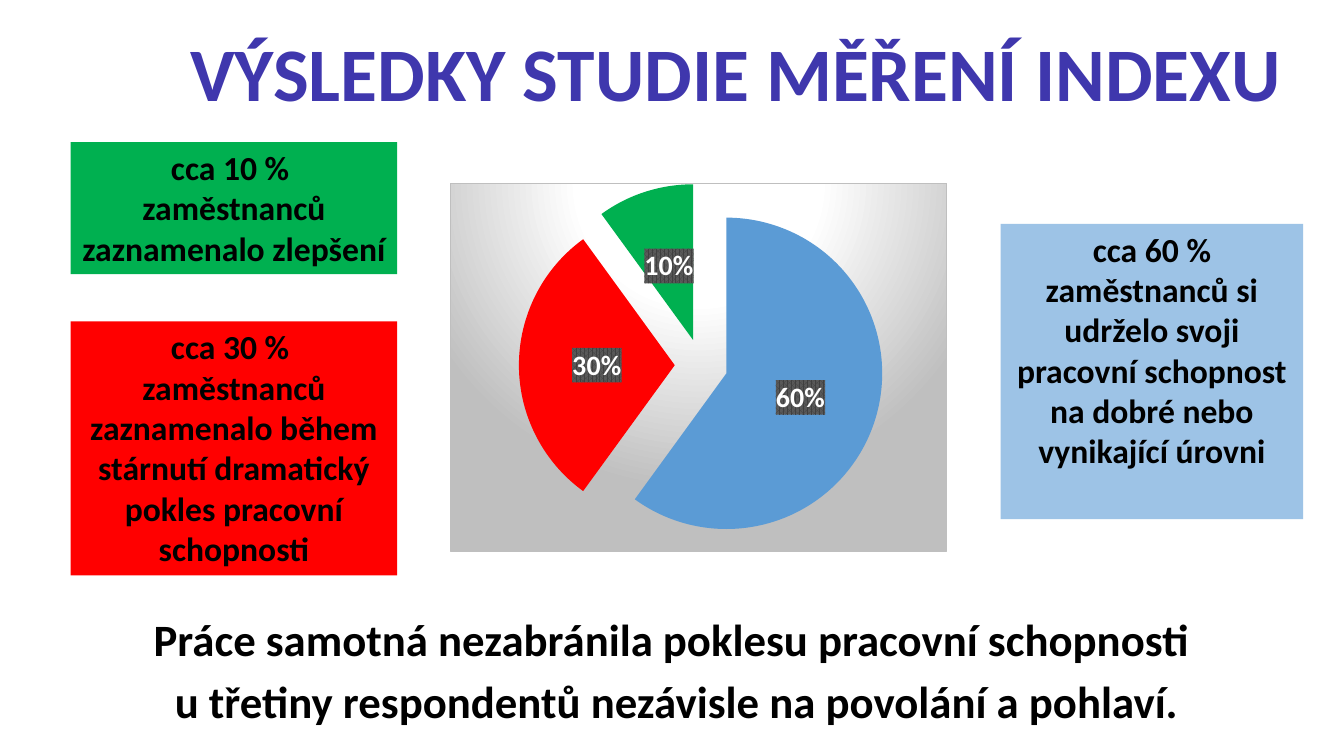
from lxml import etree
from pptx import Presentation
from pptx.chart import data as chart_data
from pptx.dml.color import RGBColor
from pptx.enum import chart as charts, shapes, text
from pptx.oxml import ns, parse_xml
from pptx.util import Cm, Pt

FONT = "Calibri"
BLACK = "000000"
SLICES = [(60, "5B9BD5"), (30, "FF0000"), (10, "00B050")]
NAMESPACES = ns.nsdecls("c", "a")

PLOT_LAYOUT = f"""<c:layout {NAMESPACES}><c:manualLayout>
<c:layoutTarget val="inner"/><c:xMode val="edge"/><c:yMode val="edge"/>
<c:x val="0.025"/><c:y val="0"/><c:w val="0.96"/><c:h val="0.99"/>
</c:manualLayout></c:layout>"""
CHART_BACKGROUND = f"""<c:spPr {NAMESPACES}><a:gradFill><a:gsLst>
<a:gs pos="0"><a:srgbClr val="FFFFFF"/></a:gs>
<a:gs pos="39000"><a:srgbClr val="FFFFFF"/></a:gs>
<a:gs pos="100000"><a:srgbClr val="BFBFBF"/></a:gs></a:gsLst>
<a:path path="circle"><a:fillToRect l="50000" t="-80000" r="50000" b="180000"/></a:path>
</a:gradFill><a:ln w="9525"><a:solidFill><a:srgbClr val="BFBFBF"/></a:solidFill></a:ln></c:spPr>"""
LABEL_BACKGROUND = f"""<c:spPr {NAMESPACES}><a:pattFill prst="pct75">
<a:fgClr><a:srgbClr val="404040"/></a:fgClr><a:bgClr><a:srgbClr val="595959"/></a:bgClr>
</a:pattFill><a:ln><a:noFill/></a:ln></c:spPr>"""


def color(value):
    return RGBColor.from_string(value)


def set_font(font, size, value, bold=True):
    font.name, font.size, font.bold = FONT, Pt(size), bold
    font.color.rgb = color(value)


def write_paragraphs(frame, lines, size, line_spacing=None, gap=0):
    frame.word_wrap = True
    frame.vertical_anchor = text.MSO_ANCHOR.TOP
    for index, line in enumerate(lines):
        paragraph = frame.add_paragraph() if index else frame.paragraphs[0]
        paragraph.text = line
        paragraph.alignment = text.PP_ALIGN.CENTER
        paragraph.line_spacing = line_spacing
        if index:
            paragraph.space_before = Pt(gap)
        set_font(paragraph.font, size, BLACK)


def place_title(slide, wording):
    title = slide.shapes.title
    title.left, title.top, title.width, title.height = Cm(3.94), Cm(0.53), Cm(29.21), Cm(2.84)
    title.text_frame.vertical_anchor = text.MSO_ANCHOR.MIDDLE
    paragraph = title.text_frame.paragraphs[0]
    paragraph.text = wording
    paragraph.alignment = text.PP_ALIGN.CENTER
    paragraph.line_spacing = 0.9
    set_font(paragraph.font, 54, "3F37AD")


def add_box(slide, left, top, width, height, fill, lines):
    shape = slide.shapes.add_shape(
        shapes.MSO_SHAPE.RECTANGLE, Cm(left), Cm(top), Cm(width), Cm(height))
    shape.shadow.inherit = False
    shape.fill.solid()
    shape.fill.fore_color.rgb = color(fill)
    shape.line.fill.background()
    write_paragraphs(shape.text_frame, lines, 24)


def add_conclusion(slide, lines):
    box = slide.shapes.add_textbox(Cm(1.3), Cm(15.44), Cm(31.52), Cm(2.59))
    write_paragraphs(box.text_frame, lines, 32, line_spacing=0.9, gap=10)


def add_pie(slide):
    data = chart_data.CategoryChartData()
    data.categories = [str(number) for number in range(1, len(SLICES) + 1)]
    data.add_series("Series 1", [value for value, _ in SLICES])
    chart = slide.shapes.add_chart(
        charts.XL_CHART_TYPE.PIE, Cm(11.35), Cm(4.6), Cm(12.52), Cm(9.3), data).chart
    chart.has_legend = False
    chart.has_title = False
    set_font(chart.font, 10, BLACK, bold=False)

    plot = chart.plots[0]
    plot.vary_by_categories = True
    series = plot.series[0]
    for index, (_, fill) in enumerate(SLICES):
        slice_format = series.points[index].format
        slice_format.fill.solid()
        slice_format.fill.fore_color.rgb = color(fill)
        slice_format.line.fill.background()
    explosion = etree.Element(ns.qn("c:explosion"), val="17")
    series._element.find(ns.qn("c:dPt")).addprevious(explosion)

    labels = series.data_labels
    labels.show_percentage = True
    labels.show_value = False
    labels.number_format = "0%"
    labels.number_format_is_linked = False
    labels.position = charts.XL_LABEL_POSITION.CENTER
    set_font(labels.font, 20, "FFFFFF")
    labels._element.find(ns.qn("c:numFmt")).addnext(parse_xml(LABEL_BACKGROUND))
    style_chart_area(chart)


def style_chart_area(chart):
    chart_element = chart._chartSpace.find(ns.qn("c:chart"))
    chart_element.addprevious(etree.Element(ns.qn("c:roundedCorners"), val="0"))
    chart_element.addnext(parse_xml(CHART_BACKGROUND))
    plot_area = chart_element.find(ns.qn("c:plotArea"))
    for layout in plot_area.findall(ns.qn("c:layout")):
        plot_area.remove(layout)
    plot_area.insert(0, parse_xml(PLOT_LAYOUT))


def main():
    presentation = Presentation()
    presentation.slide_width, presentation.slide_height = Cm(33.87), Cm(19.05)
    slide = presentation.slides.add_slide(presentation.slide_layouts[5])
    place_title(slide, "VÝSLEDKY STUDIE MĚŘENÍ INDEXU")
    add_conclusion(slide, [
        "Práce samotná nezabránila poklesu pracovní schopnosti ",
        "u třetiny respondentů nezávisle na povolání a pohlaví."])
    add_pie(slide)
    add_box(slide, 25.22, 5.64, 7.62, 7.44, "9DC3E6", [
        "cca 60 % zaměstnanců si udrželo svoji pracovní schopnost "
        "na dobré nebo vynikající úrovni"])
    add_box(slide, 1.78, 3.58, 8.23, 3.33, "00B050", [
        "cca 10 % ", "zaměstnanců zaznamenalo zlepšení"])
    add_box(slide, 1.78, 8.1, 8.23, 6.4, "FF0000", [
        "cca 30 % ",
        "zaměstnanců zaznamenalo během stárnutí dramatický pokles pracovní schopnosti"])
    presentation.save("out.pptx")


if __name__ == "__main__":
    main()
